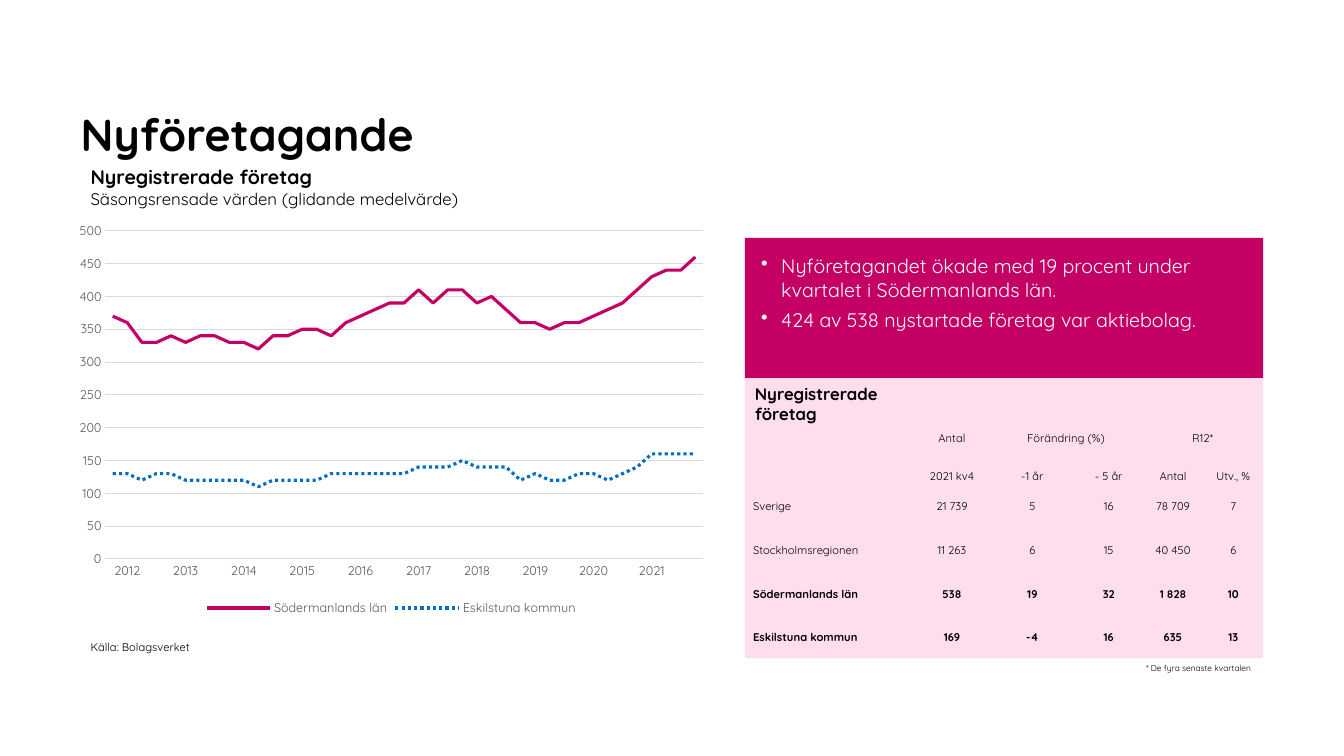
import pptx
import pptx.chart.data
import pptx.dml.color
import pptx.enum.chart
import pptx.enum.dml
import pptx.enum.shapes
import pptx.enum.text
import pptx.oxml
import pptx.oxml.ns
import pptx.util
from lxml import etree

RGBColor = pptx.dml.color.RGBColor
Align = pptx.enum.text.PP_ALIGN
Anchor = pptx.enum.text.MSO_ANCHOR
Pt = pptx.util.Pt
qn = pptx.oxml.ns.qn

BLACK = RGBColor(0x00, 0x00, 0x00)
WHITE = RGBColor(0xFF, 0xFF, 0xFF)
MAGENTA = RGBColor(0xC4, 0x00, 0x64)
PINK = RGBColor(0xFE, 0xDE, 0xED)
BLUE = RGBColor(0x00, 0x6E, 0xBF)
GREY = RGBColor(0x59, 0x59, 0x59)
GRID_GREY = RGBColor(0xD9, 0xD9, 0xD9)

FONT = "Quicksand"
SLIDE_WIDTH = pptx.util.Inches(13.33)
SLIDE_HEIGHT = pptx.util.Inches(7.5)
NO_STYLE_NO_GRID = "{2D5ABB26-0587-4C30-8999-92F81FD0307C}"

# Shares of the slide, in percent
MARGIN = 6
PANEL_LEFT, PANEL_WIDTH = 55.43, 38.55
MESSAGE_TOP, FIGURES_TOP, FIGURES_BOTTOM = 31.47, 50, 87.07
COLUMN_WIDTHS = [12.6, 5.6, 6.36, 5.01, 4.56, 4.42]
ROW_HEIGHTS = [4.8, 5.07] + [5.8] * 4

FIRST_YEAR, LAST_YEAR = 2012, 2021
SERIES = [
    ("Södermanlands län", MAGENTA, pptx.enum.dml.MSO_LINE.SOLID,
     [370, 360, 330, 330, 340, 330, 340, 340, 330, 330, 320, 340, 340, 350,
      350, 340, 360, 370, 380, 390, 390, 410, 390, 410, 410, 390, 400, 380,
      360, 360, 350, 360, 360, 370, 380, 390, 410, 430, 440, 440, 460]),
    ("Eskilstuna kommun", BLUE, pptx.enum.dml.MSO_LINE.ROUND_DOT,
     [130, 130, 120, 130, 130, 120, 120, 120, 120, 120, 110, 120, 120, 120,
      120, 130, 130, 130, 130, 130, 130, 140, 140, 140, 150, 140, 140, 140,
      120, 130, 120, 120, 130, 130, 120, 130, 140, 160, 160, 160, 160]),
]
FIGURES = [
    ["", "Antal", "Förändring (%)", "", "R12*", ""],
    ["", "2021 kv4", "-1 år", "- 5 år", "Antal", "Utv., %"],
    ["Sverige", "21 739", "5", "16", "78 709", "7"],
    ["Stockholmsregionen", "11 263", "6", "15", "40 450", "6"],
    ["Södermanlands län", "538", "19", "32", "1 828", "10"],
    ["Eskilstuna kommun", "169", "-4", "16", "635", "13"],
]
MESSAGES = [
    "Nyföretagandet ökade med 19 procent under kvartalet i Södermanlands län.",
    "424 av 538 nystartade företag var aktiebolag.",
]


def across(share):
    return round(SLIDE_WIDTH * share / 100)


def down(share):
    return round(SLIDE_HEIGHT * share / 100)


def place(left, top, width, height):
    """Turn percentages of the slide into a box in EMU."""
    return across(left), down(top), across(width), down(height)


def set_values(target, values):
    for name, value in values.items():
        setattr(target, name, value)


def format_font(font, size, color=BLACK, bold=False):
    set_values(font, {"name": FONT, "size": Pt(size), "bold": bold})
    font.color.rgb = color


def add_run(paragraph, text, size, color=BLACK, bold=False):
    run = paragraph.add_run()
    run.text = text
    format_font(run.font, size, color, bold)


def set_margins(target, size):
    sides = ("margin_left", "margin_top", "margin_right", "margin_bottom")
    set_values(target, dict.fromkeys(sides, pptx.util.Inches(size)))


def add_text(slide, box, lines, wrap=False):
    """Add a text box whose (text, size, bold) lines share one paragraph."""
    frame = slide.shapes.add_textbox(*box).text_frame
    frame.word_wrap = wrap
    paragraph = frame.paragraphs[0]
    for index, (text, size, bold) in enumerate(lines):
        if index:
            paragraph.add_line_break()
        add_run(paragraph, text, size, bold=bold)


def add_panel(slide, top, bottom, color):
    panel = slide.shapes.add_shape(
        pptx.enum.shapes.MSO_SHAPE.RECTANGLE,
        *place(PANEL_LEFT, top, PANEL_WIDTH, bottom - top))
    panel.shadow.inherit = False
    panel.fill.solid()
    panel.fill.fore_color.rgb = color
    panel.line.fill.background()
    return panel


def add_bullets(shape, messages):
    frame = shape.text_frame
    set_values(frame, {"word_wrap": True, "vertical_anchor": Anchor.TOP})
    set_margins(frame, 0.16)
    for index, message in enumerate(messages):
        paragraph = frame.add_paragraph() if index else frame.paragraphs[0]
        paragraph.alignment = Align.LEFT
        if index:
            paragraph.space_before = Pt(5)
        properties = paragraph._p.get_or_add_pPr()
        indent = pptx.util.Inches(0.2)
        properties.set("marL", str(indent))
        properties.set("indent", str(-indent))
        etree.SubElement(properties, qn("a:buChar")).set("char", "•")
        add_run(paragraph, message, 14, WHITE)


def add_title(slide, text):
    title = slide.shapes.title
    box = place(MARGIN, 4.93, 69.17, 16.27)
    set_values(title, dict(zip(("left", "top", "width", "height"), box)))
    frame = title.text_frame
    set_values(frame, {"vertical_anchor": Anchor.BOTTOM, "word_wrap": True})
    set_margins(frame, 0)
    frame.paragraphs[0].alignment = Align.LEFT
    add_run(frame.paragraphs[0], text, 32, bold=True)


def add_figures_table(slide):
    box = place(PANEL_LEFT, 54.13, PANEL_WIDTH, sum(ROW_HEIGHTS))
    graphic = slide.shapes.add_table(len(FIGURES), len(COLUMN_WIDTHS), *box)
    for style in graphic._element.iter(qn("a:tableStyleId")):
        style.text = NO_STYLE_NO_GRID
    table = graphic.table
    set_values(table, {"first_row": False, "horz_banding": False})
    for column, width in zip(table.columns, COLUMN_WIDTHS):
        column.width = across(width)
    for row, height in zip(table.rows, ROW_HEIGHTS):
        row.height = down(height)
    for first in (2, 4):
        table.cell(0, first).merge(table.cell(0, first + 1))
    for row, texts in enumerate(FIGURES):
        for column, text in enumerate(texts):
            cell = table.cell(row, column)
            cell.fill.background()
            set_margins(cell, 0.01)
            cell.margin_bottom = 0
            cell.vertical_anchor = Anchor.BOTTOM if row < 2 else Anchor.MIDDLE
            if column == 0:
                cell.margin_left = pptx.util.Inches(0.08)
            if text:
                paragraph = cell.text_frame.paragraphs[0]
                paragraph.alignment = Align.CENTER if column else Align.LEFT
                add_run(paragraph, text, 8, bold=row >= 4)


def set_plot_layout(chart, x, y, width, height):
    """Fix the inner plot area as shares of the chart."""
    layout = pptx.oxml.parse_xml(
        f'<c:layout {pptx.oxml.ns.nsdecls("c")}><c:manualLayout>'
        '<c:layoutTarget val="inner"/><c:xMode val="edge"/><c:yMode val="edge"/>'
        f'<c:x val="{x}"/><c:y val="{y}"/><c:w val="{width}"/><c:h val="{height}"/>'
        '</c:manualLayout></c:layout>')
    plot_area = chart._chartSpace.chart.plotArea
    for old in plot_area.findall(qn("c:layout")):
        plot_area.remove(old)
    plot_area.insert(0, layout)


def add_company_chart(slide):
    data = pptx.chart.data.CategoryChartData()
    labels = [""]
    for year in range(FIRST_YEAR, LAST_YEAR + 1):
        labels += [str(year), "", "", ""]
    data.categories = labels[:len(SERIES[0][3])]
    for name, _, _, values in SERIES:
        data.add_series(name, values)
    chart = slide.shapes.add_chart(pptx.enum.chart.XL_CHART_TYPE.LINE,
                                   *place(4.95, 28.4, 48.3, 53.6), data).chart
    set_values(chart, {"has_title": False, "has_legend": True})
    format_font(chart.font, 10)
    set_values(chart.legend, {
        "position": pptx.enum.chart.XL_LEGEND_POSITION.BOTTOM,
        "include_in_layout": False})
    for part in (chart.legend, chart.category_axis.tick_labels,
                 chart.value_axis.tick_labels):
        format_font(part.font, 9, GREY)
    for axis in (chart.category_axis, chart.value_axis):
        axis.major_tick_mark = pptx.enum.chart.XL_TICK_MARK.NONE
    set_values(chart.value_axis, {"minimum_scale": 0, "maximum_scale": 500,
                                  "major_unit": 50})
    chart.value_axis.format.line.fill.background()
    for line in (chart.category_axis.format.line,
                 chart.value_axis.major_gridlines.format.line):
        line.color.rgb = GRID_GREY
        line.width = Pt(0.75)
    skip = etree.Element(qn("c:tickLblSkip"), val="1")
    chart.category_axis._element.find(qn("c:noMultiLvlLbl")).addprevious(skip)
    chart.plots[0].vary_by_categories = False
    for series, (_, color, dash, _) in zip(chart.plots[0].series, SERIES):
        series.smooth = False
        series.marker.style = pptx.enum.chart.XL_MARKER_STYLE.NONE
        series.format.line.color.rgb = color
        set_values(series.format.line, {"width": Pt(2.25), "dash_style": dash})
    set_plot_layout(chart, 0.06, 0.04, 0.92, 0.81)


def main():
    presentation = pptx.Presentation()
    set_values(presentation, {"slide_width": SLIDE_WIDTH,
                              "slide_height": SLIDE_HEIGHT})
    slide = presentation.slides.add_slide(presentation.slide_layouts[5])
    add_title(slide, "Nyföretagande")
    add_text(slide, place(MARGIN, 84, 9.45, 3.2), [("Källa: Bolagsverket", 8, False)])
    add_panel(slide, FIGURES_TOP, FIGURES_BOTTOM, PINK)
    add_bullets(add_panel(slide, MESSAGE_TOP, FIGURES_TOP, MAGENTA), MESSAGES)
    add_text(slide, place(PANEL_LEFT, 50.13, 15.3, 4),
             [("Nyregistrerade företag", 12, True)], wrap=True)
    add_text(slide, place(84.53, FIGURES_BOTTOM, 9.68, 2.67),
             [("* De fyra senaste kvartalen", 6, False)])
    add_text(slide, place(MARGIN, 21.2, 30.98, 7.2),
             [("Nyregistrerade företag", 14, True),
              ("Säsongsrensade värden (glidande medelvärde)", 12, False)])
    add_figures_table(slide)
    add_company_chart(slide)
    presentation.save("out.pptx")


if __name__ == "__main__":
    main()
